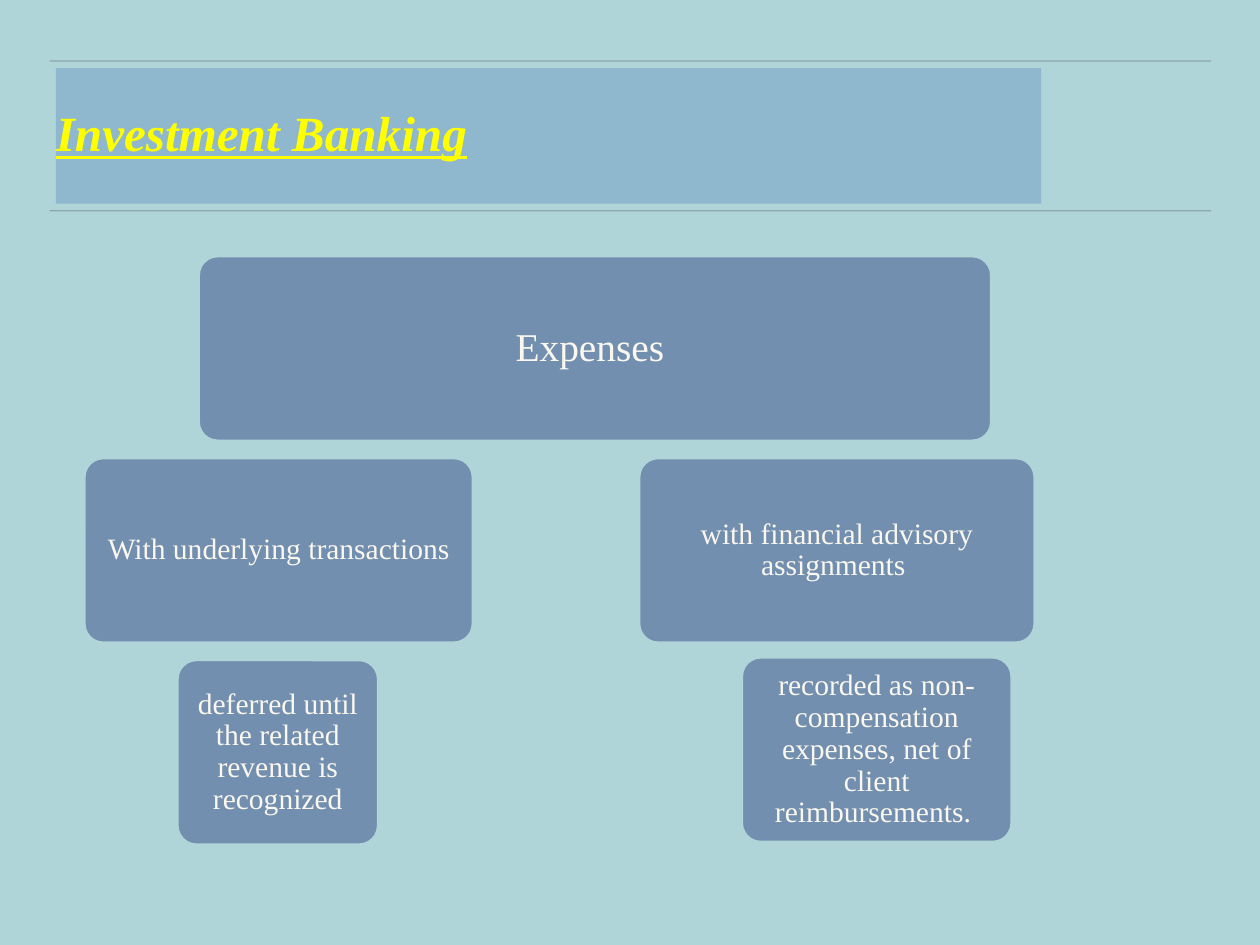
from typing import NamedTuple

from lxml.etree import SubElement
from pptx import Presentation
from pptx.dml.color import RGBColor
from pptx.enum.shapes import MSO_CONNECTOR as Connector, MSO_SHAPE as Shape
from pptx.enum.text import MSO_ANCHOR as Anchor, MSO_AUTO_SIZE as AutoSize, PP_ALIGN as Align
from pptx.oxml.ns import qn
from pptx.util import Inches, Pt

BACKGROUND = "AFD5D9"
TITLE_BAND = "8FB8CE"
TITLE_TEXT = "FFFF00"
CARD_FILL = "738FAF"
CARD_TEXT = "FAF7EE"
RULE = "444444"
RULE_LEFT, RULE_RIGHT = 0.56, 13.67
RULE_TOPS = (0.69, 2.38)
CARD_HEIGHT = 2.07


class Card(NamedTuple):
    text: str
    left: float
    top: float
    width: float
    size: int = 24
    inset: float = 0.1


CARDS = (
    Card("Expenses ", 2.25, 2.9, 8.93, size=32, inset=0.13),
    Card("With underlying transactions", 0.96, 5.18, 4.37),
    Card("deferred until the related revenue is recognized", 2.01, 7.46, 2.25),
    Card("with financial advisory assignments ", 7.22, 5.18, 4.45),
    Card("recorded as non-compensation expenses, net of client reimbursements. ",
         8.38, 7.43, 3.03),
)


def paint(target, color: str) -> None:
    """Give a fill a solid colour."""
    target.solid()
    target.fore_color.rgb = RGBColor.from_string(color)


def write(box, text: str, *, size: int, color: str, align: Align, inset: float = 0,
          bold: bool = False, italic: bool = False, underline: bool = False) -> None:
    frame = box.text_frame
    frame.auto_size = AutoSize.NONE
    frame.word_wrap = True
    frame.vertical_anchor = Anchor.MIDDLE
    frame.margin_left = frame.margin_right = Inches(inset)
    frame.margin_top = frame.margin_bottom = Inches(inset)
    para = frame.paragraphs[0]
    para.alignment = align
    para.line_spacing = 0.9
    para.space_before = Pt(0)
    span = para.add_run()
    span.text = text
    font = span.font
    font.name = "Times New Roman"
    font.size = Pt(size)
    font.bold, font.italic, font.underline = bold, italic, underline
    paint(font.fill, color)


def add_rule(page, top: float) -> None:
    rule = page.shapes.add_connector(Connector.STRAIGHT, Inches(RULE_LEFT), Inches(top),
                                     Inches(RULE_RIGHT), Inches(top))
    rule.line.width = Pt(1)
    paint(rule.line.fill, RULE)
    properties = rule._element.spPr
    color = properties.find(".//" + qn("a:srgbClr"))
    SubElement(color, qn("a:alpha"), val="30000")
    SubElement(properties, qn("a:effectLst"))


def add_title(page) -> None:
    title = page.shapes.title
    title.left, title.top = Inches(0.63), Inches(0.77)
    title.width, title.height = Inches(11.12), Inches(1.53)
    paint(title.fill, TITLE_BAND)
    write(title, "Investment Banking", size=40, color=TITLE_TEXT, align=Align.LEFT,
          bold=True, italic=True, underline=True)


def add_card(page, card: Card) -> None:
    box = page.shapes.add_shape(Shape.ROUNDED_RECTANGLE, Inches(card.left), Inches(card.top),
                                Inches(card.width), Inches(CARD_HEIGHT))
    box.adjustments[0] = 0.1
    box.shadow.inherit = False
    paint(box.fill, CARD_FILL)
    paint(box.line.fill, BACKGROUND)
    box.line.width = Pt(1)
    write(box, card.text, size=card.size, color=CARD_TEXT, align=Align.CENTER,
          inset=card.inset)


def main() -> None:
    deck = Presentation()
    deck.slide_width, deck.slide_height = Inches(14.22), Inches(10.67)
    title_only = deck.slide_layouts[5]
    page = deck.slides.add_slide(title_only)
    paint(page.background.fill, BACKGROUND)
    for top in RULE_TOPS:
        add_rule(page, top)
    add_title(page)
    for card in CARDS:
        add_card(page, card)
    deck.save("out.pptx")


if __name__ == "__main__":
    main()
